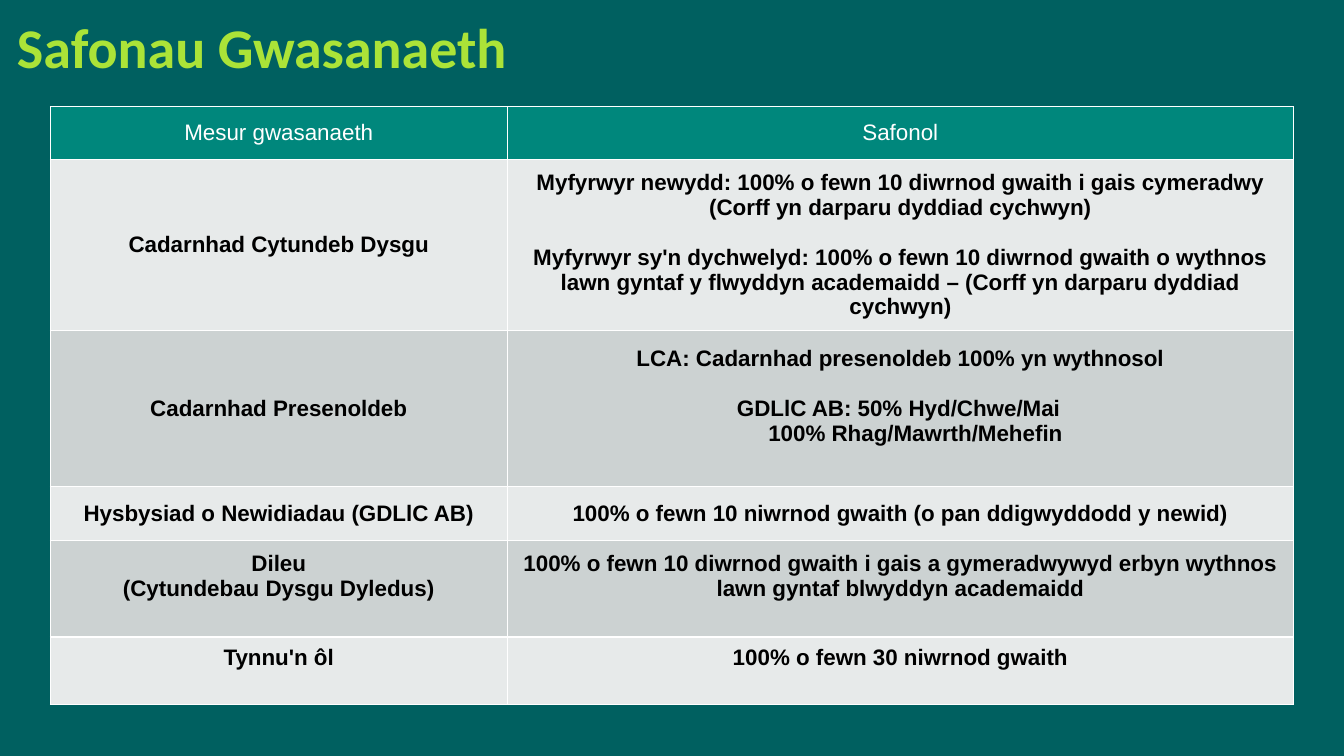
from pptx import Presentation
from pptx import util as u
from pptx.dml import color
from pptx.enum import text
from pptx.oxml import parse_xml
from pptx.oxml.ns import nsdecls


def paint(fill, tone):
    fill.solid()
    fill.fore_color.rgb = color.RGBColor.from_string(tone)


def style(para, face, size, tone, bold):
    para.font.name = face
    para.font.size = u.Pt(size)
    para.font.bold = bold
    para.font.color.rgb = color.RGBColor.from_string(tone)


deck = Presentation()
deck.slide_width, deck.slide_height = u.Inches(13.33), u.Inches(7.5)
slide = deck.slides.add_slide(deck.slide_layouts[6])
paint(slide.background.fill, "006060")

# Title
box = slide.shapes.add_textbox(u.Inches(0.07), u.Inches(0.08), u.Inches(7.51), u.Inches(0.77))
box.text_frame.word_wrap = True
box.text_frame.text = "Safonau Gwasanaeth"
style(box.text_frame.paragraphs[0], "Calibri", 40, "ABE338", True)

# Rows: height, space under each cell's text, measure, standard
rows = [
    (0.52, (0.04, 0.04), "Mesur gwasanaeth", "Safonol"),
    (1.7, (0.04, 0.04), "Cadarnhad Cytundeb Dysgu",
     "Myfyrwyr newydd: 100% o fewn 10 diwrnod gwaith i gais cymeradwy "
     "(Corff yn darparu dyddiad cychwyn)\n"
     "Myfyrwyr sy'n dychwelyd: 100% o fewn 10 diwrnod gwaith o wythnos lawn gyntaf "
     "y flwyddyn academaidd – (Corff yn darparu dyddiad cychwyn)"),
    (1.55, (0.04, 0.29), "Cadarnhad Presenoldeb",
     "LCA: Cadarnhad presenoldeb 100% yn wythnosol\n"
     "GDLlC AB: 50% Hyd/Chwe/Mai\n100% Rhag/Mawrth/Mehefin"),
    (0.53, (0.04, 0.04), "Hysbysiad o Newidiadau (GDLlC AB)",
     "100% o fewn 10 niwrnod gwaith (o pan ddigwyddodd y newid)"),
    (0.96, (0.29, 0.29), "Dileu\n(Cytundebau Dysgu Dyledus)",
     "100% o fewn 10 diwrnod gwaith i gais a gymeradwywyd erbyn wythnos "
     "lawn gyntaf blwyddyn academaidd"),
    (0.67, (0.29, 0.29), "Tynnu'n ôl", "100% o fewn 30 niwrnod gwaith"),
]

# Table
grid = slide.shapes.add_table(len(rows), 2, u.Inches(0.5), u.Inches(1.06),
                              u.Inches(12.33), u.Inches(5.93)).table
for col, width in zip(grid.columns, (4.53, 7.8)):
    col.width = u.Inches(width)

for i, (height, gaps, *words) in enumerate(rows):
    grid.rows[i].height = u.Inches(height)
    head = i == 0
    for cell, word, gap in zip(grid.rows[i].cells, words, gaps):
        cell.text = word
        cell.vertical_anchor = text.MSO_ANCHOR.MIDDLE
        cell.margin_left = cell.margin_right = u.Inches(0.07)
        cell.margin_top, cell.margin_bottom = u.Inches(0.04), u.Inches(gap)
        for side in "LRTB":
            cell._tc.get_or_add_tcPr().append(parse_xml(
                f'<a:ln{side} {nsdecls("a")} w="12700"><a:solidFill>'
                f'<a:srgbClr val="FFFFFF"/></a:solidFill></a:ln{side}>'))
        paint(cell.fill, "00877C" if head else ("CCD2D2", "E7EAEA")[i % 2])
        for para in cell.text_frame.paragraphs:
            para.alignment = text.PP_ALIGN.CENTER
            style(para, "Arial", 16, "FFFFFF" if head else "000000", not head)

# Gaps and indents inside the standards
for i in (1, 2):
    grid.cell(i, 1).text_frame.paragraphs[1].space_before = u.Pt(18)
for para, left in zip(grid.cell(2, 1).text_frame.paragraphs[1:], (2.21, 2.52)):
    para.alignment = text.PP_ALIGN.LEFT
    para._p.get_or_add_pPr().set("marL", str(u.Inches(left)))

deck.save("out.pptx")
